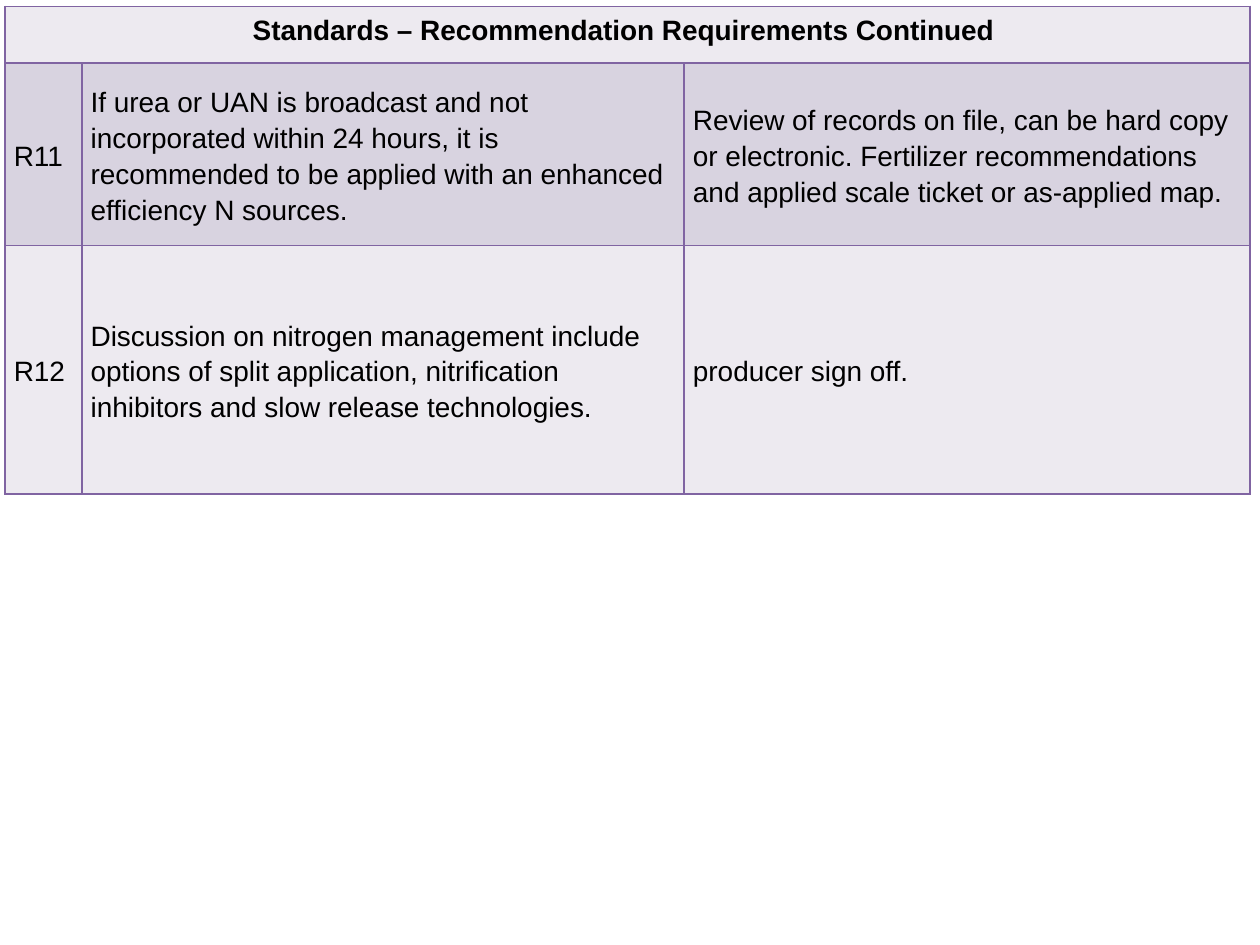
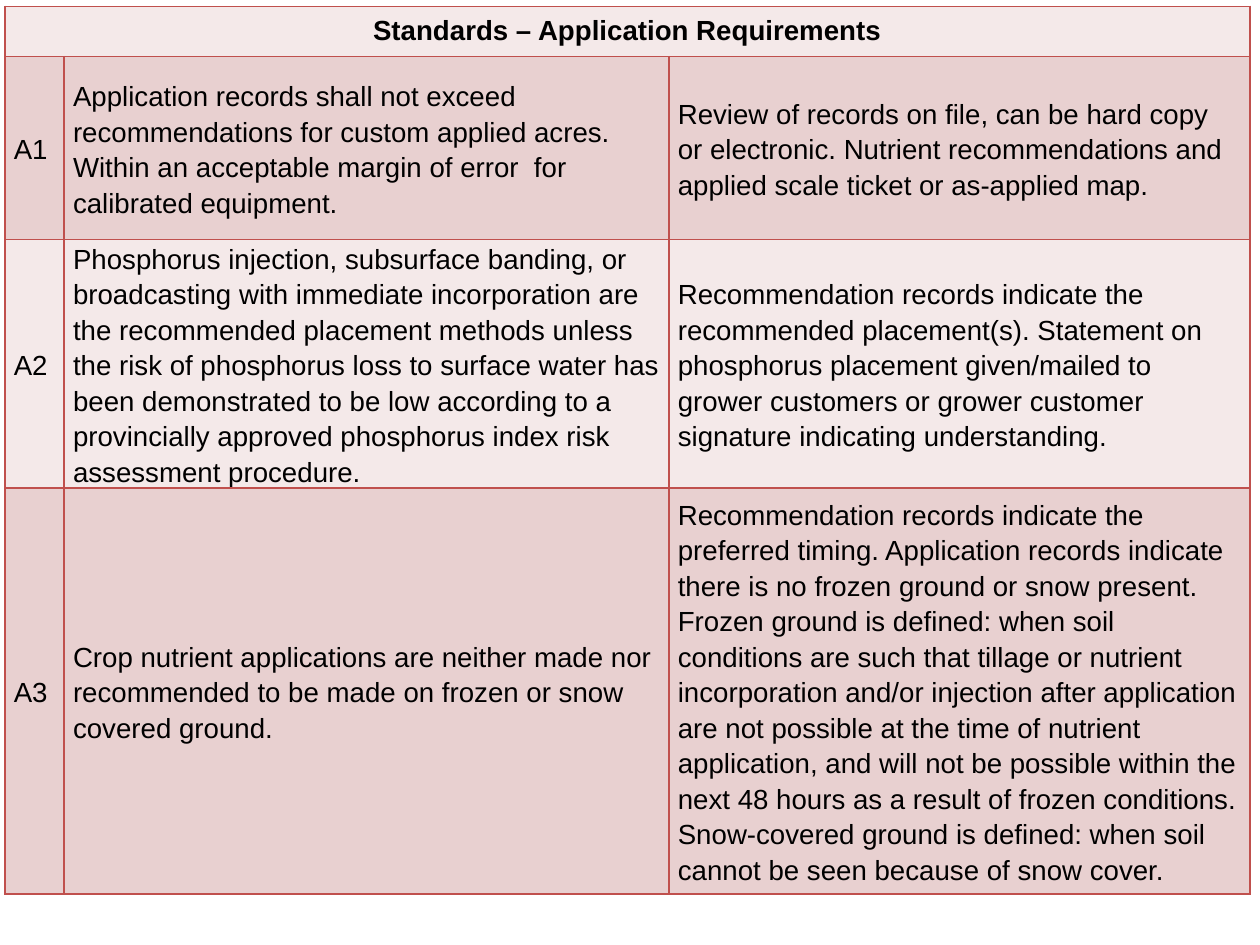
from dataclasses import dataclass

from lxml import etree
from pptx import Presentation
from pptx.dml.color import RGBColor
from pptx.enum.text import MSO_ANCHOR, PP_ALIGN
from pptx.oxml.ns import qn
from pptx.util import Inches, Pt

CENTER, LEFT = PP_ALIGN.CENTER, PP_ALIGN.LEFT
TOP, MIDDLE = MSO_ANCHOR.TOP, MSO_ANCHOR.MIDDLE
BLANK_LAYOUT = 6


@dataclass(frozen=True)
class Palette:
    border: str
    light: str
    dark: str


@dataclass(frozen=True)
class Theme:
    font: str = "Arial"
    text: str = "000000"
    border_width: float = 1
    line_spacing: float = 1.15
    recommendation: Palette = Palette("8064A2", "EDEAF0", "D8D3E0")
    application: Palette = Palette("C0504D", "F4E9E9", "E8D0D0")
    recommendation_size: float = 16
    application_size: float = 15.8


class Deck:
    def __init__(self, theme):
        self.theme = theme
        self.prs = Presentation()
        self.prs.slide_width, self.prs.slide_height = Inches(10), Inches(7.5)
        self.s = None

    def add_slide(self):
        self.s = self.prs.slides.add_slide(self.prs.slide_layouts[BLANK_LAYOUT])

    def borders(self, cell, color):
        tcPr = cell._tc.get_or_add_tcPr()
        for side in ("a:lnL", "a:lnR", "a:lnT", "a:lnB"):
            ln = etree.SubElement(tcPr, qn(side), w=str(Pt(self.theme.border_width)))
            fill = etree.SubElement(ln, qn("a:solidFill"))
            etree.SubElement(fill, qn("a:srgbClr"), val=color)

    def cell_text(self, cell, text, size, header):
        """Header text is bold and centred; body text sits mid-height."""
        side, edge = (0.15, 0.07) if header else (0.07, 0)
        cell.margin_left = cell.margin_right = Inches(side)
        cell.margin_top = cell.margin_bottom = Inches(edge)
        cell.vertical_anchor = TOP if header else MIDDLE
        p = cell.text_frame.paragraphs[0]
        p.text = text
        p.alignment = CENTER if header else LEFT
        if not header:
            p.line_spacing = self.theme.line_spacing
        for r in p.runs:
            r.font.name, r.font.size, r.font.bold = self.theme.font, Pt(size), header
            r.font.color.rgb = RGBColor.from_string(self.theme.text)

    def standards_table(self, title, rows, widths, heights, palette, size):
        """Add a full-width title row above banded rows of standards."""
        grid = [(title, "", "")] + rows
        table = self.s.shapes.add_table(
            len(grid), len(widths), Inches(0.04), Inches(0.05),
            Inches(sum(widths)), Inches(sum(heights))).table
        for column, width in zip(table.columns, widths):
            column.width = Inches(width)
        for row, height in zip(table.rows, heights):
            row.height = Inches(height)
        table.cell(0, 0).merge(table.cell(0, len(widths) - 1))

        for i, texts in enumerate(grid):
            band = palette.dark if i % 2 else palette.light
            for j, text in enumerate(texts):
                cell = table.cell(i, j)
                self.borders(cell, palette.border)
                cell.fill.solid()
                cell.fill.fore_color.rgb = RGBColor.from_string(band)
                self.cell_text(cell, text, size, header=i == 0)


def main():
    theme = Theme()
    deck = Deck(theme)

    # Recommendation requirements
    deck.add_slide()
    deck.standards_table(
        "Standards – Recommendation Requirements Continued ",
        [
            ("R11",
             "If urea or UAN is broadcast and not incorporated within 24 hours, it is "
             "recommended to be applied with an enhanced efficiency N sources.",
             "Review of records on file, can be hard copy or electronic. Fertilizer "
             "recommendations and applied scale ticket or as-applied map."),
            ("R12",
             "Discussion on nitrogen management include options of split application, "
             "nitrification inhibitors and slow release technologies.",
             "producer sign off."),
        ],
        widths=[0.61, 4.78, 4.49], heights=[0.45, 1.45, 1.97],
        palette=theme.recommendation, size=theme.recommendation_size)

    # Application requirements
    deck.add_slide()
    deck.standards_table(
        "Standards – Application Requirements",
        [
            ("A1",
             "Application records shall not exceed recommendations for custom applied "
             "acres. Within an acceptable margin of error  for calibrated equipment.",
             "Review of records on file, can be hard copy or electronic. Nutrient "
             "recommendations and applied scale ticket or as-applied map."),
            ("A2",
             "Phosphorus injection, subsurface banding, or broadcasting with immediate "
             "incorporation are the recommended placement methods unless the risk of "
             "phosphorus loss to surface water has been demonstrated to be low according "
             "to a provincially approved phosphorus index risk assessment procedure.",
             "Recommendation records indicate the recommended placement(s). Statement on "
             "phosphorus placement given/mailed to grower customers or grower customer "
             "signature indicating understanding."),
            ("A3",
             "Crop nutrient applications are neither made nor recommended to be made on "
             "frozen or snow covered ground.",
             "Recommendation records indicate the preferred timing. Application records "
             "indicate there is no frozen ground or snow present. Frozen ground is "
             "defined: when soil conditions are such that tillage or nutrient "
             "incorporation and/or injection after application are not possible at the "
             "time of nutrient application, and will not be possible within the next 48 "
             "hours as a result of frozen conditions. Snow-covered ground is defined: "
             "when soil cannot be seen because of snow cover."),
        ],
        widths=[0.47, 4.8, 4.61], heights=[0.4, 1.45, 1.97, 3.22],
        palette=theme.application, size=theme.application_size)

    deck.prs.save("out.pptx")


if __name__ == "__main__":
    main()
